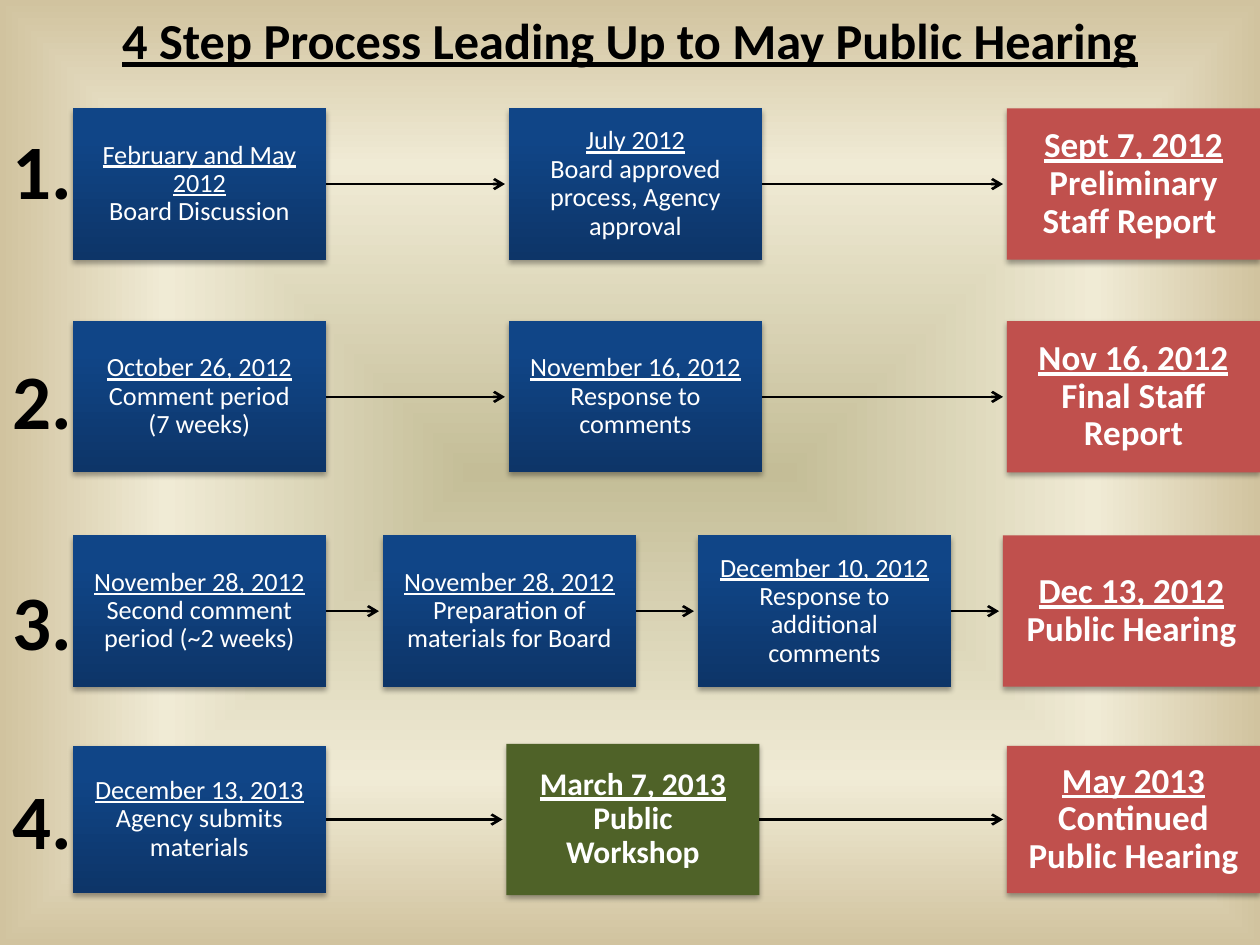
from pptx import Presentation
from pptx.dml.color import RGBColor
from pptx.enum.shapes import MSO_CONNECTOR, MSO_SHAPE
from pptx.enum.text import MSO_ANCHOR, PP_ALIGN
from pptx.oxml import parse_xml
from pptx.oxml.ns import nsdecls
from pptx.util import Cm, Pt

TITLE = "4 Step Process Leading Up to May Public Hearing"
WIDE, HIGH, BOX, GAP = 25.4, 19.05, 5.1, 0.08
FONT, BLACK, WHITE = "Calibri", "000000", "FFFFFF"
SAND = [(0, "C4BD97"), (65, "F0EBD5"), (100, "D1C39F")]
NAVY = [(0, "0D3568"), (80, "104587"), (100, "0E458A")]
CORE = ('<a:path path="shape"><a:fillToRect l="50000" t="50000" '
        'r="50000" b="50000"/></a:path>')
RISE = '<a:lin ang="16200000" scaled="0"/>'

# kind: fill, text size, bold, inset
KINDS = {
    "step": (NAVY, 15, False, 0.3),
    "shop": ("4F6228", 18, True, 0.35),
    "goal": ("C0504D", 20, True, 0.4),
}
# row: middle, top of number, boxes as (left, height, kind, lines)
ROWS = [
    (3.71, 2.34, [
        (1.47, 3.05, "step", ["February and May 2012", "Board Discussion"]),
        (10.26, 3.05, "step",
         ["July 2012", "Board approved process, Agency approval"]),
        (20.3, 3.05, "goal", ["Sept 7, 2012", "Preliminary Staff Report "]),
    ]),
    (8, 6.99, [
        (1.47, 3.05, "step",
         ["October 26, 2012", "Comment period", "(7 weeks)"]),
        (10.26, 3.05, "step", ["November 16, 2012", "Response to comments"]),
        (20.3, 3.05, "goal", ["Nov 16, 2012", "Final Staff Report"]),
    ]),
    (12.32, 11.43, [
        (1.47, 3.05, "step",
         ["November 28, 2012", "Second comment period (~2 weeks)"]),
        (7.72, 3.05, "step",
         ["November 28, 2012", "Preparation of materials for Board"]),
        (14.07, 3.05, "step",
         ["December 10, 2012", "Response to additional comments"]),
        (20.22, 3.05, "goal", ["Dec 13, 2012", "Public Hearing"]),
    ]),
    (16.52, 15.44, [
        (1.47, 2.97, "step", ["December 13, 2013", "Agency submits materials"]),
        (10.21, 3.05, "shop", ["March 7, 2013", "Public Workshop"]),
        (20.3, 2.97, "goal", ["May 2013", "Continued", "Public Hearing"]),
    ]),
]


def paint(code):
    return RGBColor.from_string(code)


def blend(stops, way):
    marks = "".join(f'<a:gs pos="{pos * 1000}"><a:srgbClr val="{code}"/></a:gs>'
                    for pos, code in stops)
    return (f'<a:gradFill {nsdecls("a")} rotWithShape="1">'
            f'<a:gsLst>{marks}</a:gsLst>{way}</a:gradFill>')


def style(para, size, code, bold=False, under=False):
    for run in para.runs:
        font = run.font
        font.name, font.size, font.bold = FONT, Pt(size), bold
        font.underline, font.color.rgb = under, paint(code)


def add_box(slide, mid, left, high, kind, lines):
    fill, size, bold, inset = KINDS[kind]
    wide = WIDE - left if kind == "goal" else BOX
    box = slide.shapes.add_shape(MSO_SHAPE.RECTANGLE, Cm(left),
                                 Cm(mid - high / 2), Cm(wide), Cm(high))
    props = box._element.spPr
    if fill is NAVY:
        props.insert(2, parse_xml(blend(NAVY, RISE)))
    else:
        box.fill.solid()
        box.fill.fore_color.rgb = paint(fill)
    box.line.fill.background()
    box.shadow.inherit = False
    props[-1].append(parse_xml(
        f'<a:outerShdw {nsdecls("a")} blurRad="39370" dist="22860" '
        'dir="5400000" rotWithShape="0"><a:srgbClr val="000000">'
        '<a:alpha val="35000"/></a:srgbClr></a:outerShdw>'))
    frame = box.text_frame
    frame.word_wrap, frame.vertical_anchor = True, MSO_ANCHOR.MIDDLE
    frame.margin_left = frame.margin_right = Cm(inset)
    frame.margin_top = frame.margin_bottom = Cm(inset)
    frame.text = "\n".join(lines)
    for num, para in enumerate(frame.paragraphs):
        para.alignment, para.line_spacing = PP_ALIGN.CENTER, 0.9
        style(para, size, WHITE, bold, num == 0)
    return box


def add_arrow(slide, start, left, mid):
    arrow = slide.shapes.add_connector(
        MSO_CONNECTOR.STRAIGHT, start.left + start.width, Cm(mid),
        Cm(left - GAP), Cm(mid))
    arrow.begin_connect(start, 3)
    arrow.end_y = arrow.begin_y
    arrow.line.color.rgb, arrow.line.width = paint(BLACK), Pt(1.5)
    arrow.line._get_or_add_ln().append(
        parse_xml(f'<a:tailEnd {nsdecls("a")} type="arrow"/>'))
    arrow._element.spPr.append(parse_xml(f'<a:effectLst {nsdecls("a")}/>'))


def add_title(slide):
    title = slide.shapes.title
    title.left, title.top = Cm(1.27), Cm(0)
    title.width, title.height = Cm(22.86), Cm(1.57)
    title.text_frame.text = TITLE
    title.text_frame.vertical_anchor = MSO_ANCHOR.MIDDLE
    para = title.text_frame.paragraphs[0]
    para.alignment = PP_ALIGN.CENTER
    style(para, 28.8, BLACK, True, True)


def add_number(slide, num, top):
    label = slide.shapes.add_textbox(Cm(0), Cm(top), Cm(1.73), Cm(2.13))
    label.text_frame.word_wrap = False
    label.text_frame.text = f"{num}."
    style(label.text_frame.paragraphs[0], 44, BLACK, True)


def main():
    """Build the slide of four process rows and save it."""
    deck = Presentation()
    deck.slide_width, deck.slide_height = Cm(WIDE), Cm(HIGH)
    slide = deck.slides.add_slide(deck.slide_layouts[5])
    slide._element.cSld.insert(0, parse_xml(
        f'<p:bg {nsdecls("p", "a")}><p:bgPr>{blend(SAND, CORE)}'
        '<a:effectLst/></p:bgPr></p:bg>'))
    add_title(slide)
    for num, (mid, top, boxes) in enumerate(ROWS, 1):
        last = None
        for left, high, kind, lines in boxes:
            if last:
                add_arrow(slide, last, left, mid)
            last = add_box(slide, mid, left, high, kind, lines)
        add_number(slide, num, top)
    deck.save("out.pptx")


if __name__ == "__main__":
    main()
